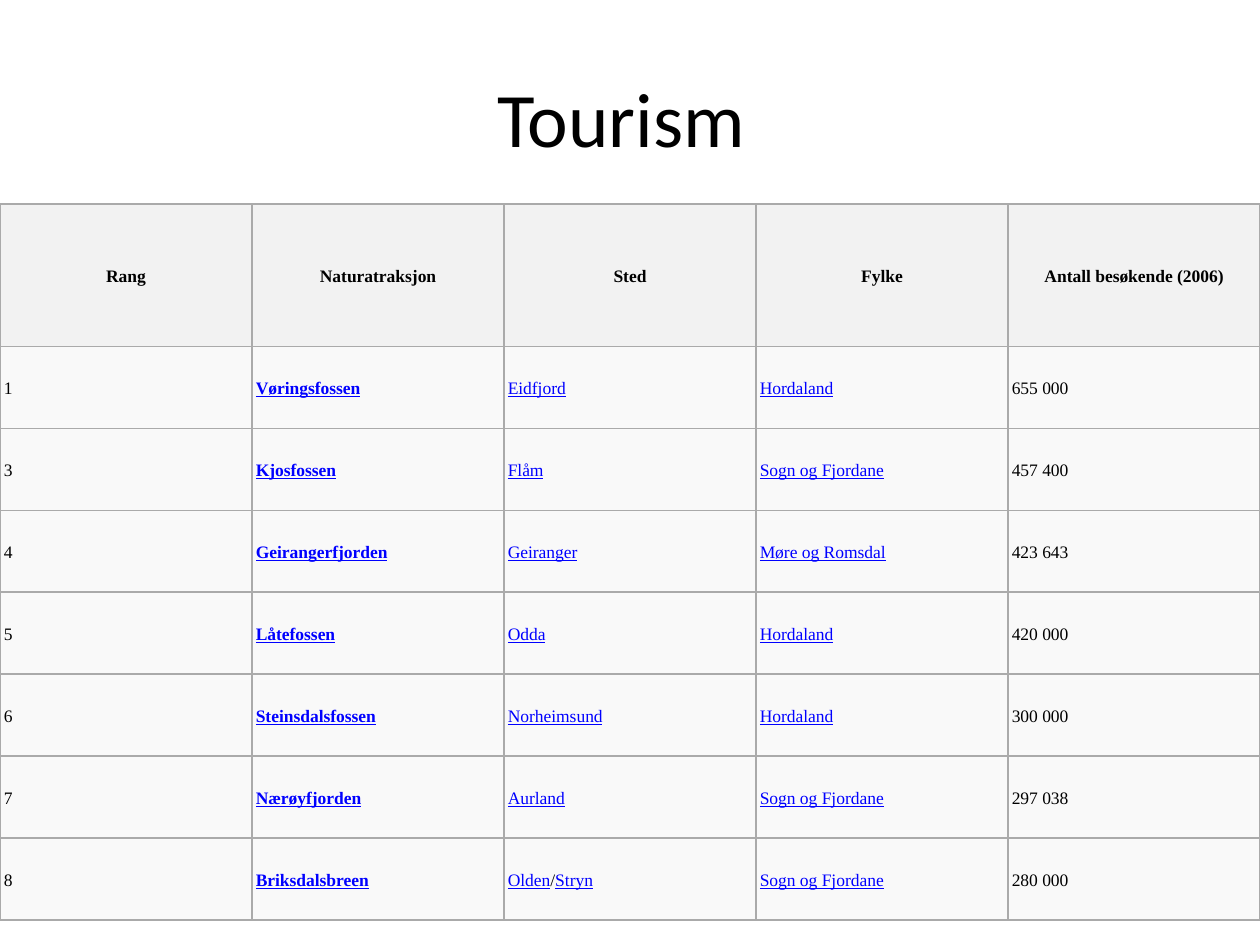
from lxml.etree import SubElement
from pptx import Presentation
from pptx.dml.color import RGBColor
from pptx.enum.text import MSO_ANCHOR as Anchor, PP_ALIGN as Align
from pptx.oxml.ns import qn
from pptx.util import Inches, Pt

COLORS = {
    "text": "000000",
    "link": "0000FF",
    "border": "AAAAAA",
    "header": "F2F2F2",
    "body": "F9F9F9",
}
HEADINGS = ["Rang", "Naturatraksjon", "Sted", "Fylke", "Antall besøkende (2006)"]
ATTRACTIONS = [
    ["1", "Vøringsfossen", "Eidfjord", "Hordaland", "655 000"],
    ["3", "Kjosfossen", "Flåm", "Sogn og Fjordane", "457 400"],
    ["4", "Geirangerfjorden", "Geiranger", "Møre og Romsdal", "423 643"],
    ["5", "Låtefossen", "Odda", "Hordaland", "420 000"],
    ["6", "Steinsdalsfossen", "Norheimsund", "Hordaland", "300 000"],
    ["7", "Nærøyfjorden", "Aurland", "Sogn og Fjordane", "297 038"],
    ["8", "Briksdalsbreen", "Olden/Stryn", "Sogn og Fjordane", "280 000"],
]
LINK_COLUMNS = (1, 2, 3)
NAME_COLUMN = 1


def add_text(para, text, font="Times New Roman", size=10, color="text",
             bold=False, underline=False):
    span = para.add_run()
    span.text = text
    span.font.name = font
    span.font.size = Pt(size)
    span.font.bold = bold
    span.font.underline = underline
    span.font.color.rgb = RGBColor.from_string(COLORS[color])


def add_borders(cell, color, width=1):
    """Draw all four sides; call before the cell's fill is set."""
    properties = cell._tc.get_or_add_tcPr()
    for side in ("lnL", "lnR", "lnT", "lnB"):
        line = SubElement(properties, qn(f"a:{side}"), w=str(Pt(width)))
        fill = SubElement(line, qn("a:solidFill"))
        SubElement(fill, qn("a:srgbClr"), val=COLORS[color])


deck = Presentation()
deck.slide_width = Inches(10)
deck.slide_height = Inches(7.5)
page = deck.slides.add_slide(deck.slide_layouts[6])

# Title
title_box = page.shapes.add_textbox(Inches(0.5), Inches(0.3), Inches(9), Inches(1.25))
title_frame = title_box.text_frame
title_frame.word_wrap = True
title_frame.vertical_anchor = Anchor.MIDDLE
title_para = title_frame.paragraphs[0]
title_para.alignment = Align.CENTER
add_text(title_para, "Tourism ", font="Calibri", size=44)

# Table of attractions
rows = [HEADINGS] + ATTRACTIONS
table = page.shapes.add_table(
    len(rows), len(HEADINGS), Inches(0), Inches(1.62), Inches(10), Inches(5.67)
).table
table.horz_banding = False
for column in table.columns:
    column.width = Inches(2)

for row_index, values in enumerate(rows):
    is_header = row_index == 0
    table.rows[row_index].height = Inches(1.13 if is_header else 0.65)
    for column_index, value in enumerate(values):
        cell = table.cell(row_index, column_index)
        add_borders(cell, "border")
        cell.fill.solid()
        fill_color = COLORS["header" if is_header else "body"]
        cell.fill.fore_color.rgb = RGBColor.from_string(fill_color)
        cell.vertical_anchor = Anchor.MIDDLE
        cell.margin_left = cell.margin_right = Inches(0.03)
        cell.margin_top = cell.margin_bottom = Inches(0.03)

        para = cell.text_frame.paragraphs[0]
        para.alignment = Align.CENTER if is_header else Align.LEFT
        para.line_spacing = 1.15
        para.space_before = para.space_after = Pt(12)

        is_link = not is_header and column_index in LINK_COLUMNS
        is_bold = is_header or column_index == NAME_COLUMN
        for part_index, part in enumerate(value.split("/")):
            if part_index:
                add_text(para, "/")
            add_text(para, part, color="link" if is_link else "text",
                     bold=is_bold, underline=is_link)

deck.save("out.pptx")
